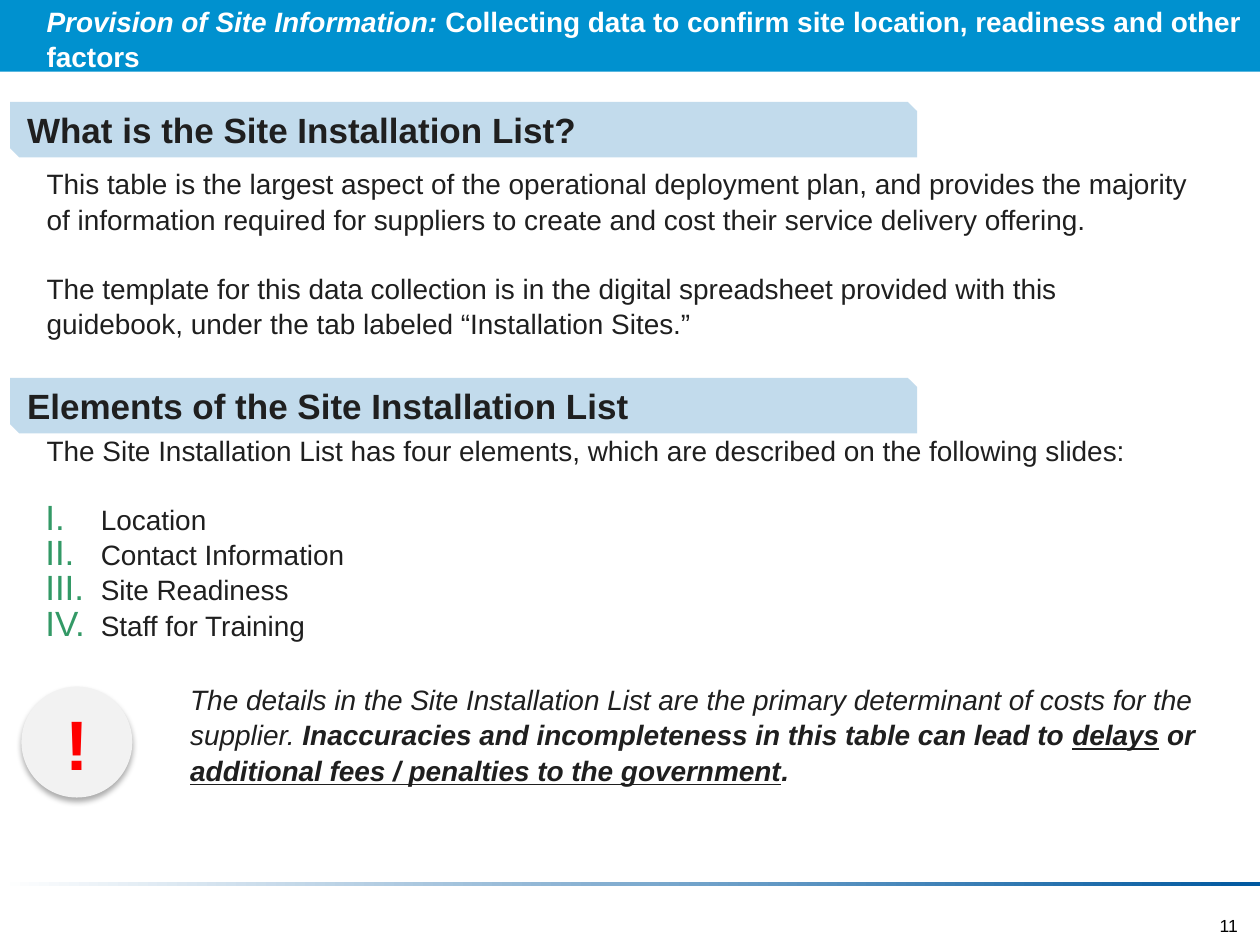
from dataclasses import dataclass

from lxml.etree import SubElement
from pptx import Presentation
from pptx.dml.color import RGBColor as Color
from pptx.enum.shapes import MSO_SHAPE as Shape
from pptx.enum.text import MSO_ANCHOR as Anchor, MSO_AUTO_SIZE as AutoSize, PP_ALIGN as Align
from pptx.oxml.ns import qn
from pptx.util import Inches, Pt


@dataclass(frozen=True)
class Theme:
    font: str = "Arial"
    ink: str = "1F1F1F"
    black: str = "000000"
    white: str = "FFFFFF"
    header: str = "0091CF"
    rule: str = "00589F"
    heading: str = "C2DBEC"
    numeral: str = "339966"
    badge: str = "F2F2F2"
    alert: str = "FF0000"
    body_size: float = 16
    heading_size: float = 20
    badge_size: float = 40
    number_size: float = 10
    leading: float = 1.05
    blank_line: float = 19.3


THEME = Theme()
COLUMNS, ROWS = 100, 75
CELL = Inches(0.1)
MARGIN = 1.7
INDENT = 0.2
LIST_INDENT = 0.63
LIST_HANG = -0.44


def grid(*cells):
    return [round(cell * CELL) for cell in cells]


def place(box, cells):
    box.left, box.top, box.width, box.height = grid(*cells)


def style(para, size, color=THEME.ink, bold=False, align=Align.LEFT):
    para.alignment = align
    font = para.font
    font.name, font.size, font.bold = THEME.font, Pt(size), bold
    font.color.rgb = Color.from_string(color)


def prepare(box, wrap=True):
    frame = box.text_frame
    frame.word_wrap = wrap
    frame.auto_size = AutoSize.NONE
    frame.vertical_anchor = Anchor.MIDDLE
    frame.margin_left = frame.margin_right = 0
    frame.margin_top = frame.margin_bottom = 0
    return frame


def indent(para, left, hang=0, numbered=False):
    props = para._p.get_or_add_pPr()
    props.set("marL", str(Inches(left)))
    props.set("indent", str(Inches(hang)))
    if numbered:
        tint = SubElement(props, qn("a:buClr"))
        SubElement(tint, qn("a:srgbClr"), val=THEME.numeral)
        SubElement(props, qn("a:buSzPct"), val="125000")
        SubElement(props, qn("a:buFont"), typeface=THEME.font)
        SubElement(props, qn("a:buAutoNum"), type="romanUcPeriod")
    else:
        SubElement(props, qn("a:buNone"))


def add_prose(frame, paragraphs, color=THEME.ink, bold=False):
    for index, spans in enumerate(paragraphs):
        para = frame.paragraphs[0] if index == 0 else frame.add_paragraph()
        indent(para, INDENT)
        para.line_spacing = THEME.leading
        para.space_before = Pt(THEME.blank_line if index else 0)
        style(para, THEME.body_size, color, bold)
        for text, marks in spans:
            span = para.add_run()
            span.text = text
            for mark in marks:
                setattr(span.font, mark, True)


def add_numbered(frame, items):
    for index, item in enumerate(items):
        para = frame.add_paragraph()
        para.text = item
        indent(para, LIST_INDENT, LIST_HANG, numbered=True)
        para.line_spacing = THEME.leading
        para.space_before = Pt(0 if index else THEME.blank_line)
        style(para, THEME.body_size)


def add_text_box(page, cells, wrap=True):
    return prepare(page.shapes.add_textbox(*grid(*cells)), wrap)


def add_block(page, kind, cells, fill=None):
    block = page.shapes.add_shape(kind, *grid(*cells))
    block.shadow.inherit = False
    block.line.fill.background()
    if fill:
        block.fill.solid()
        block.fill.fore_color.rgb = Color.from_string(fill)
    return block


def add_header(page):
    bar = add_block(page, Shape.RECTANGLE, (0, 0, COLUMNS, 5.7), THEME.header)
    page.shapes._spTree.insert(2, bar._element)
    title = page.shapes.title
    place(title, (MARGIN, 0.1, COLUMNS - MARGIN, 5.8))
    add_prose(prepare(title), [[
        ("Provision of Site Information: ", ["italic"]),
        ("Collecting data to confirm site location, readiness and other factors", []),
    ]], THEME.white, bold=True)


def add_heading(page, row, text):
    band = add_block(page, Shape.SNIP_2_DIAG_RECTANGLE, (0.8, row, 72, 4.4), THEME.heading)
    band.text_frame.vertical_anchor = Anchor.MIDDLE
    para = band.text_frame.paragraphs[0]
    para.text = text
    style(para, THEME.heading_size, bold=True)


def add_badge(page):
    badge = add_block(page, Shape.OVAL, (MARGIN, 54.5, 8.8, 8.8), THEME.badge)
    effects = badge._element.spPr.find(qn("a:effectLst"))
    shadow = SubElement(effects, qn("a:outerShdw"), blurRad=str(Pt(3.5)),
                        dist=str(Pt(2.2)), dir="5400000", rotWithShape="0")
    tint = SubElement(shadow, qn("a:srgbClr"), val=THEME.black)
    SubElement(tint, qn("a:alpha"), val="32000")
    para = prepare(badge).paragraphs[0]
    para.text = "!"
    style(para, THEME.badge_size, THEME.alert, True, Align.CENTER)


def add_footer(page):
    rule = add_block(page, Shape.RECTANGLE, (0, 70, COLUMNS, 0.3))
    rule.fill.gradient()
    rule.fill.gradient_angle = 0
    for stop, color in zip(rule.fill.gradient_stops, (THEME.white, THEME.rule)):
        stop.color.rgb = Color.from_string(color)
    para = add_text_box(page, (96.8, 72.6, 2.1, 1.7), wrap=False).paragraphs[0]
    para.text = "11"
    style(para, THEME.number_size, THEME.black)


def main():
    deck = Presentation()
    deck.slide_width, deck.slide_height = grid(COLUMNS, ROWS)
    page = deck.slides.add_slide(deck.slide_layouts[1])
    add_header(page)
    add_footer(page)

    add_heading(page, 8.1, "What is the Site Installation List?")
    add_prose(add_text_box(page, (MARGIN, 13.3, 93.3, 13.5)), [
        [("This table is the largest aspect of the operational deployment plan, and provides "
          "the majority of information required for suppliers to create and cost their "
          "service delivery offering.", [])],
        [("The template for this data collection is in the digital spreadsheet provided with "
          "this guidebook, under the tab labeled “Installation Sites.”", [])],
    ])

    add_heading(page, 30, "Elements of the Site Installation List")
    elements = page.placeholders[1]
    place(elements, (MARGIN, 34.5, 93.3, 16.2))
    frame = prepare(elements)
    add_prose(frame, [[("The Site Installation List has four elements, which are described "
                        "on the following slides:", [])]])
    add_numbered(frame, ["Location", "Contact Information", "Site Readiness",
                         "Staff for Training"])

    add_badge(page)
    strong = ["italic", "bold"]
    linked = strong + ["underline"]
    add_prose(add_text_box(page, (13.1, 54.2, 83, 8.1)), [[
        ("The details in the Site Installation List are the primary determinant of costs "
         "for the supplier. ", ["italic"]),
        ("Inaccuracies and incompleteness in this table can lead to ", strong),
        ("delays", linked),
        (" or ", strong),
        ("additional fees / penalties to the government", linked),
        (".", strong),
    ]])
    deck.save("out.pptx")


if __name__ == "__main__":
    main()
